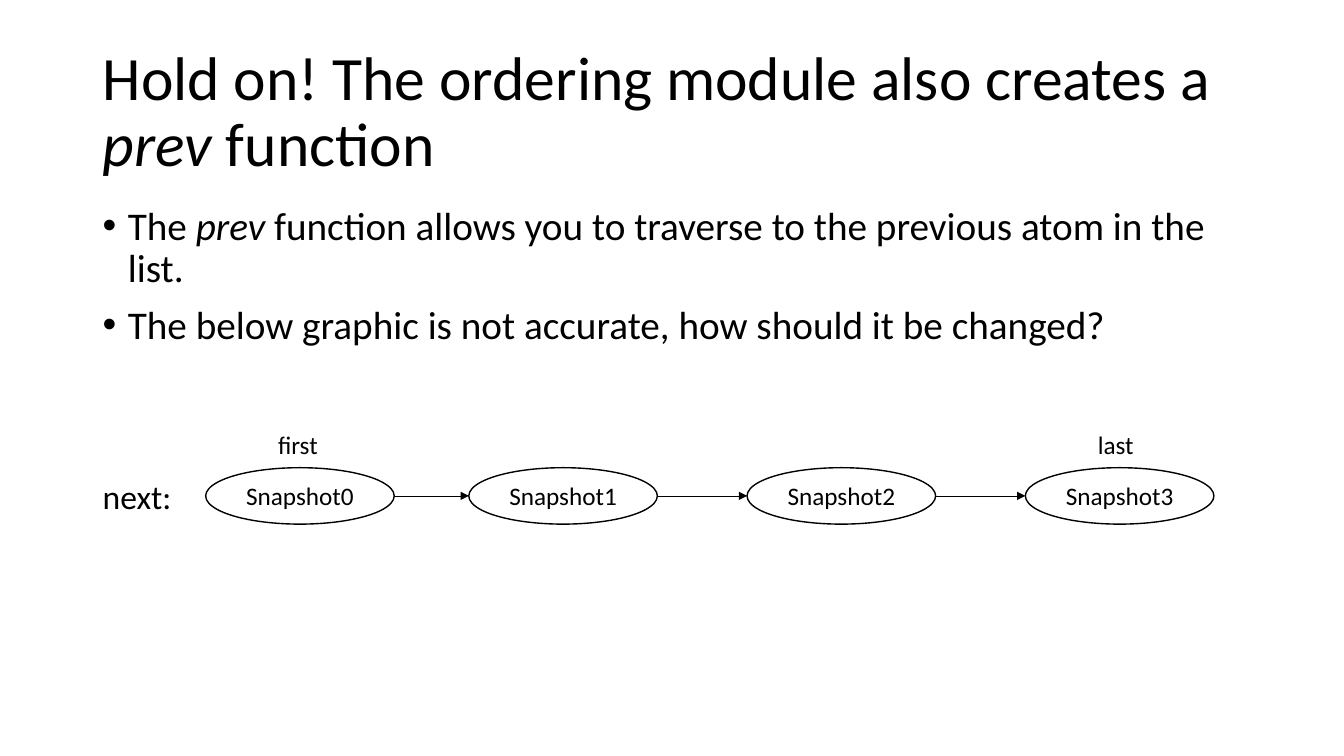
"""Build the slide about the prev function of the ordering module."""
import dataclasses

import lxml.etree
import pptx
import pptx.dml.color
import pptx.enum.shapes
import pptx.enum.text
import pptx.oxml.ns
import pptx.slide
import pptx.util

Inches = pptx.util.Inches
Pt = pptx.util.Pt
FONT = "Calibri"
COLORS = {"ink": "000000", "paper": "FFFFFF"}
NODE_TOP, NODE_WIDTH, NODE_HEIGHT = 4.64, 1.87, 0.56


@dataclasses.dataclass(frozen=True)
class Run:
    text: str
    italic: bool = False


@dataclasses.dataclass(frozen=True)
class TextBlock:
    left: float
    top: float
    width: float
    height: float
    size: int
    paragraphs: tuple[tuple[Run, ...], ...]
    wrap: bool = False
    line_spacing: float = 1.0
    space_before: int = 0
    middle: bool = False
    bulleted: bool = False


@dataclasses.dataclass(frozen=True)
class Node:
    left: float
    name: str


TEXT_BLOCKS = (
    TextBlock(
        0.92, 0.4, 11.5, 1.45, 44,
        ((Run("Hold on! The ordering module also creates a "), Run("prev", True), Run(" function")),),
        wrap=True, line_spacing=0.9, middle=True,
    ),
    TextBlock(
        0.92, 2, 11.5, 1.71, 28,
        (
            (
                Run("The "),
                Run("prev", True),
                Run(" function allows you to traverse to the previous atom in the list."),
            ),
            (Run("The below graphic is not accurate, how should it be changed?"),),
        ),
        wrap=True, line_spacing=0.9, space_before=10, bulleted=True,
    ),
    TextBlock(0.92, 4.67, 0.89, 0.5, 24, ((Run("next:"),),)),
    TextBlock(2.66, 4.21, 0.6, 0.4, 18, ((Run("first"),),)),
    TextBlock(10.79, 4.21, 0.56, 0.4, 18, ((Run("last"),),)),
)
NODES = tuple(
    Node(left, f"Snapshot{index}") for index, left in enumerate((2.04, 4.65, 7.41, 10.17))
)


def color(name: str) -> pptx.dml.color.RGBColor:
    return pptx.dml.color.RGBColor.from_string(COLORS[name])


def add_run(paragraph, content: Run, size: int) -> None:
    run = paragraph.add_run()
    run.text = content.text
    run.font.name = FONT
    run.font.size = Pt(size)
    run.font.italic = content.italic
    run.font.color.rgb = color("ink")


def add_bullet(paragraph) -> None:
    properties = paragraph._p.get_or_add_pPr()
    properties.set("marL", str(Inches(0.25)))
    properties.set("indent", str(Inches(-0.25)))
    for tag, key, value in (("a:buFont", "typeface", "Arial"), ("a:buChar", "char", "•")):
        lxml.etree.SubElement(properties, pptx.oxml.ns.qn(tag)).set(key, value)


def add_text_block(slide: pptx.slide.Slide, block: TextBlock) -> None:
    shape = slide.shapes.add_textbox(
        Inches(block.left), Inches(block.top), Inches(block.width), Inches(block.height)
    )
    frame = shape.text_frame
    frame.word_wrap = block.wrap
    if not block.wrap:
        frame.auto_size = pptx.enum.text.MSO_AUTO_SIZE.SHAPE_TO_FIT_TEXT
    if block.middle:
        frame.vertical_anchor = pptx.enum.text.MSO_ANCHOR.MIDDLE
    for index, runs in enumerate(block.paragraphs):
        paragraph = frame.add_paragraph() if index else frame.paragraphs[0]
        paragraph.line_spacing = block.line_spacing
        paragraph.space_before = Pt(block.space_before)
        if block.bulleted:
            add_bullet(paragraph)
        for content in runs:
            add_run(paragraph, content, block.size)


def add_node(slide: pptx.slide.Slide, node: Node) -> None:
    shape = slide.shapes.add_shape(
        pptx.enum.shapes.MSO_SHAPE.OVAL,
        Inches(node.left), Inches(NODE_TOP), Inches(NODE_WIDTH), Inches(NODE_HEIGHT),
    )
    shape.shadow.inherit = False
    shape.fill.solid()
    shape.fill.fore_color.rgb = color("paper")
    shape.line.color.rgb = color("ink")
    shape.line.width = Pt(1)
    frame = shape.text_frame
    frame.word_wrap = False
    frame.vertical_anchor = pptx.enum.text.MSO_ANCHOR.MIDDLE
    paragraph = frame.paragraphs[0]
    paragraph.alignment = pptx.enum.text.PP_ALIGN.CENTER
    add_run(paragraph, Run(node.name), 18)


def add_arrow(slide: pptx.slide.Slide, source: Node, target: Node) -> None:
    middle = Inches(NODE_TOP + NODE_HEIGHT / 2)
    connector = slide.shapes.add_connector(
        pptx.enum.shapes.MSO_CONNECTOR.STRAIGHT,
        Inches(source.left + NODE_WIDTH), middle, Inches(target.left), middle,
    )
    connector.line.color.rgb = color("ink")
    connector.line.width = Pt(0.5)
    line = connector.line._get_or_add_ln()
    lxml.etree.SubElement(line, pptx.oxml.ns.qn("a:tailEnd")).set("type", "triangle")
    lxml.etree.SubElement(connector._element.spPr, pptx.oxml.ns.qn("a:effectLst"))


def main() -> None:
    presentation = pptx.Presentation()
    presentation.slide_width = Inches(13.33)
    presentation.slide_height = Inches(7.5)
    slide = presentation.slides.add_slide(presentation.slide_layouts[6])
    slide.background.fill.solid()
    slide.background.fill.fore_color.rgb = color("paper")
    for block in TEXT_BLOCKS:
        add_text_block(slide, block)
    for node in NODES:
        add_node(slide, node)
    for source, target in zip(NODES, NODES[1:]):
        add_arrow(slide, source, target)
    presentation.save("out.pptx")


if __name__ == "__main__":
    main()
